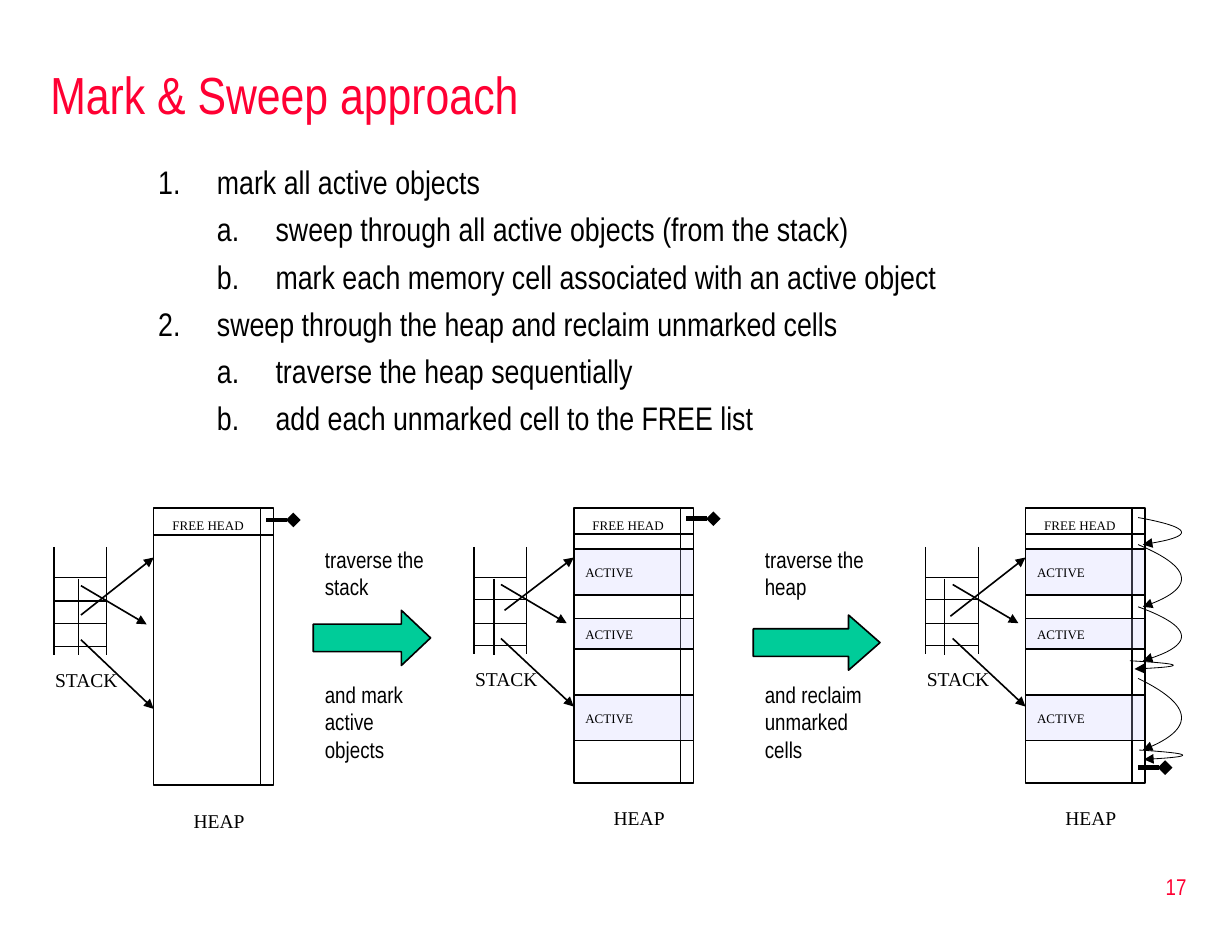
from pptx import Presentation
from pptx.dml.color import RGBColor
from pptx.enum.shapes import MSO_CONNECTOR as Connector, MSO_SHAPE as Shape
from pptx.enum.text import MSO_ANCHOR as Anchor, PP_ALIGN as Align
from pptx.oxml.ns import qn
from pptx.util import Inches, Pt
from lxml.etree import SubElement

hex_color = RGBColor.from_string
NARROW, ROMAN = "Arial Narrow", "Times New Roman"
BLACK, RED, GREEN, LAVENDER = "000000", "FF0033", "00CC99", "CCCCFF"
NO_MARGINS = {"margin_left": 0, "margin_right": 0, "margin_top": 0,
              "margin_bottom": 0, "word_wrap": False}
MIDDLE = {"vertical_anchor": Anchor.MIDDLE}

presentation = Presentation()
presentation.slide_width, presentation.slide_height = Inches(10.5), Inches(8)
slide = presentation.slides.add_slide(presentation.slide_layouts[6])
shapes = slide.shapes
column = presentation.slide_width / 105
row = presentation.slide_height / 80


def style_line(shape, width, tail=None):
    shape.line.width = Pt(width)
    shape.line.fill.solid()
    shape.line.fill.fore_color.rgb = hex_color(BLACK)
    properties = shape._element.spPr
    if tail:
        SubElement(properties.find(qn("a:ln")), qn("a:tailEnd"), type=tail)
    SubElement(properties, qn("a:effectLst"))


def write(shape, lines, size, font=NARROW, color=BLACK, frame_format={}, align=Align.LEFT):
    frame = shape.text_frame
    for name, value in {"word_wrap": True, **frame_format}.items():
        setattr(frame, name, value)
    frame.text = lines
    for paragraph in frame.paragraphs:
        paragraph.alignment = align
        for name, value in {"size": Pt(size), "name": font}.items():
            setattr(paragraph.font, name, value)
        paragraph.font.color.rgb = hex_color(color)


page_number = shapes.add_textbox(80.2 * column, 72.9 * row, 21.9 * column, 5.3 * row)
write(page_number, "17", 14, color=RED, frame_format=MIDDLE, align=Align.RIGHT)
title = shapes.add_textbox(3.3 * column, 4.2 * row, 99.2 * column, 7.5 * row)
write(title, "Mark & Sweep approach", 32, color=RED, frame_format=MIDDLE)

steps = [
    (1, "mark all active objects"),
    (2, "sweep through all active objects (from the stack)"),
    (2, "mark each memory cell associated with an active object"),
    (1, "sweep through the heap and reclaim unmarked cells"),
    (2, "traverse the heap sequentially"),
    (2, "add each unmarked cell to the FREE list"),
]
body = shapes.add_textbox(7.5 * column, 13.3 * row, 95.2 * column, 25 * row)
write(body, "\n".join(text for level, text in steps), 20)
for paragraph, (level, text) in zip(body.text_frame.paragraphs, steps):
    paragraph.level = level
    paragraph.space_before = Pt(5)
    properties = paragraph._p.get_or_add_pPr()
    properties.set("marL", str(Inches(0.5 + level / 2)))
    properties.set("indent", str(-Inches(0.5)))
    bullet = SubElement(properties, qn("a:buAutoNum"),
                        type="arabicPeriod" if level == 1 else "alphaLcPeriod")
    default_format = properties.find(qn("a:defRPr"))
    if default_format is not None:
        default_format.addprevious(bullet)

active_cells = [(46.8, 3.9), (52.7, 2.6), (59.2, 3.9)]
panels = [
    (13.1, 23.6, 0.1, -6.2, 52.4, -6.4, 44.3, []),
    (48.9, 23.4, 0, -5.9, 52, -6.8, 44.2, active_cells),
    (87.4, 23.4, 0, -6.4, 52.5, -6.9, 65.4, active_cells),
]
for left, height, shift, pointer_x, pointer_y, divider_x, free_y, cells in panels:
    heap = shapes.add_shape(Shape.RECTANGLE, left * column, 43.3 * row,
                            10.2 * column, height * row)
    heap.fill.background()
    style_line(heap, 1)

    stack_left, stack_right = left - 8.5, left - 4
    lines = [(x, 46.6, x, 55.7 + shift, 0.75, None) for x in (stack_left, stack_right)]
    lines += [(stack_left, y, stack_right, y, 0.75, None)
              for y in (49.2, 51.1 + shift, 53.1, 55 + shift)]
    lines += [
        (left + divider_x, 49.3, left + divider_x, 55.8, 1, None),
        (left - 6.2, 54.4 + shift, left, 60.2 + 2 * shift, 1, "triangle"),
        (left + pointer_x, pointer_y, left, 47.5, 1, "triangle"),
        (left - 6.2, 49.8 + shift, left - 5.6, 53.1 + shift, 1, "triangle"),
        (left + 9.1, 43.4, left + 9.1, 43.3 + height, 1, None),
        (left, 45.5 + shift, left + 10.2, 45.5 + shift, 1, None),
        (left + 9.6, free_y, left + 11.9, free_y, 3, "diamond"),
    ]
    lines[-4] = (left - 6.2, 49.8 + shift, left - 0.6, 53.1 + shift, 1, "triangle")
    for x1, y1, x2, y2, width, tail in lines:
        line = shapes.add_connector(Connector.STRAIGHT, int(x1 * column), int(y1 * row),
                                    int(x2 * column), int(y2 * row))
        style_line(line, width, tail)

    for x, y, width, text, size, frame_format in [
        (left + 3.4, 68.7 + 2 * shift, 4.5, "HEAP", 12, NO_MARGINS),
        (left - 8.4, 56.8 + shift, 5.6, "STACK", 12, NO_MARGINS),
        (left + 0.6, 43.6, 8.5, "FREE HEAD", 8, {}),
    ]:
        label = shapes.add_textbox(x * column, y * row, width * column, 2 * row)
        write(label, text, size, ROMAN, frame_format=frame_format)

    for top, cell_height in cells:
        cell = shapes.add_shape(Shape.RECTANGLE, left * column, top * row,
                                10.2 * column, cell_height * row)
        cell.fill.solid()
        cell.fill.fore_color.rgb = hex_color(LAVENDER)
        SubElement(cell._element.spPr.find(".//" + qn("a:srgbClr")), qn("a:alpha"), val="25000")
        style_line(cell, 1)
        write(cell, "ACTIVE", 8, ROMAN, frame_format=MIDDLE)

free_links = [(97, 44.1, 46.4), (97, 46.4, 51.7), (97, 51.7, 56.3),
              (96.3, 56.3, 57), (97, 57.8, 63.9), (97.1, 63.9, 64.7)]
for left, top, bottom in free_links:
    points = []
    for step in range(41):
        t = step / 40
        bend = 2 * t * (1 - t)
        points.append(((left + 7.2 * bend + 0.4 * t * t) * column,
                       (top + (bottom - top) * (0.57 * bend + t * t)) * row))
    builder = shapes.build_freeform(*points[0])
    builder.add_line_segments(points[1:], close=False)
    link = builder.convert_to_shape()
    link.fill.background()
    style_line(link, 0.5, "triangle")

phases = [
    (26.7, 52, 10, 0.53, "traverse the stack", "and mark active objects"),
    (64.2, 52.4, 10.8, 0.57, "traverse the heap", "and reclaim unmarked cells"),
]
for left, top, width, head, above, below in phases:
    arrow = shapes.add_shape(Shape.RIGHT_ARROW, left * column, top * row,
                             width * column, 4.7 * row)
    arrow.adjustments[1] = head
    arrow.fill.solid()
    arrow.fill.fore_color.rgb = hex_color(GREEN)
    style_line(arrow, 1)
    for y, height, text in [(46, 5.7, above), (57.5, 8, below)]:
        caption = shapes.add_textbox(left * column, y * row, 10.8 * column, height * row)
        write(caption, text, 14)

presentation.save("out.pptx")
